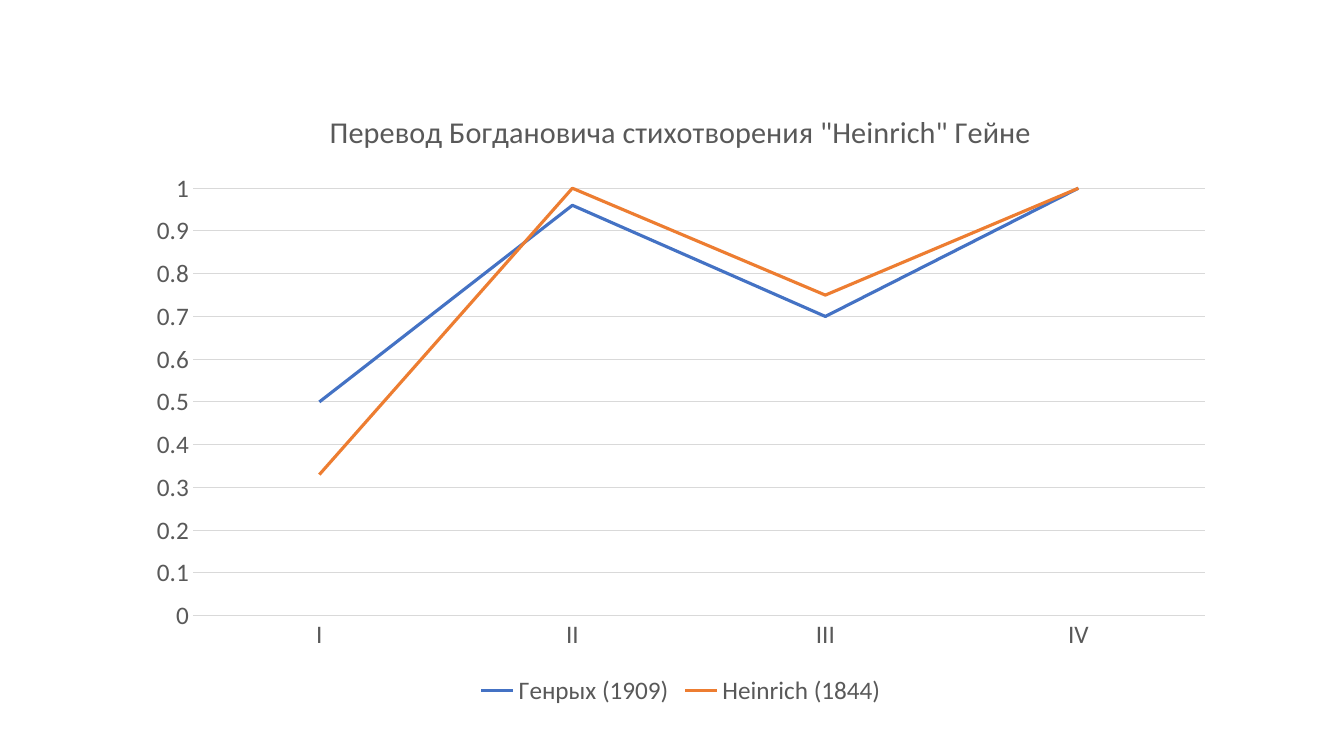
from pptx import Presentation
from pptx.chart.data import CategoryChartData
from pptx.dml.color import RGBColor
from pptx.enum.chart import XL_CHART_TYPE, XL_LEGEND_POSITION, XL_MARKER_STYLE, XL_TICK_MARK
from pptx.util import Pt

# Content
HEADING = 'Перевод Богдановича стихотворения "Heinrich" Гейне'
STANZAS = ("I", "II", "III", "IV")
POEMS = (
    ("Генрых (1909)", (0.5, 0.96, 0.7, 1), "4472C4"),
    ("Heinrich (1844)", (0.33, 1, 0.75, 1), "ED7D31"),
)

# Theme and geometry, in points
THEME = {
    "font": "Calibri", "text": "595959", "grid": "D9D9D9",
    "heading_size": 21.6, "label_size": 18, "poem_width": 2.25, "grid_width": 0.75,
}
SLIDE_SIZE = (960, 540)
CHART_BOX = (96.5, 61.9, 779.8, 445.7)
BLANK_LAYOUT = 6


def style_font(font, size=THEME["label_size"], color=THEME["text"]):
    font.name = THEME["font"]
    font.size = Pt(size)
    font.bold = False
    font.color.rgb = RGBColor.from_string(color)


def write_text(frame, text, **font_format):
    run = frame.paragraphs[0].add_run()
    run.text = text
    style_font(run.font, **font_format)


def style_line(line, color=THEME["grid"], width=THEME["grid_width"]):
    line.color.rgb = RGBColor.from_string(color)
    line.width = Pt(width)


def add_poem_chart(slide):
    chart_data = CategoryChartData()
    chart_data.categories = STANZAS
    for name, values, _ in POEMS:
        chart_data.add_series(name, values)
    chart = slide.shapes.add_chart(
        XL_CHART_TYPE.LINE, *map(Pt, CHART_BOX), chart_data).chart
    style_font(chart.font)

    # Heading
    chart.has_title = True
    write_text(chart.chart_title.text_frame, HEADING, size=THEME["heading_size"])
    chart.chart_title.include_in_layout = False

    # Poem lines
    for series, (_, _, color) in zip(chart.plots[0].series, POEMS):
        series.smooth = False
        series.marker.style = XL_MARKER_STYLE.NONE
        style_line(series.format.line, color=color, width=THEME["poem_width"])
    chart.plots[0].vary_by_categories = False

    # Axes and grid
    stanza_axis, share_axis = chart.category_axis, chart.value_axis
    for axis in (stanza_axis, share_axis):
        axis.major_tick_mark = axis.minor_tick_mark = XL_TICK_MARK.NONE
        style_font(axis.tick_labels.font)
    style_line(stanza_axis.format.line)
    share_axis.format.line.fill.background()
    share_axis.minimum_scale, share_axis.maximum_scale = 0, 1
    share_axis.major_unit = 0.1
    share_axis.has_major_gridlines = True
    style_line(share_axis.major_gridlines.format.line)

    # Legend
    chart.has_legend = True
    chart.legend.position = XL_LEGEND_POSITION.BOTTOM
    chart.legend.include_in_layout = False
    style_font(chart.legend.font)


def main():
    presentation = Presentation()
    presentation.slide_width, presentation.slide_height = map(Pt, SLIDE_SIZE)
    slide = presentation.slides.add_slide(presentation.slide_layouts[BLANK_LAYOUT])
    add_poem_chart(slide)
    presentation.save("out.pptx")


if __name__ == "__main__":
    main()
